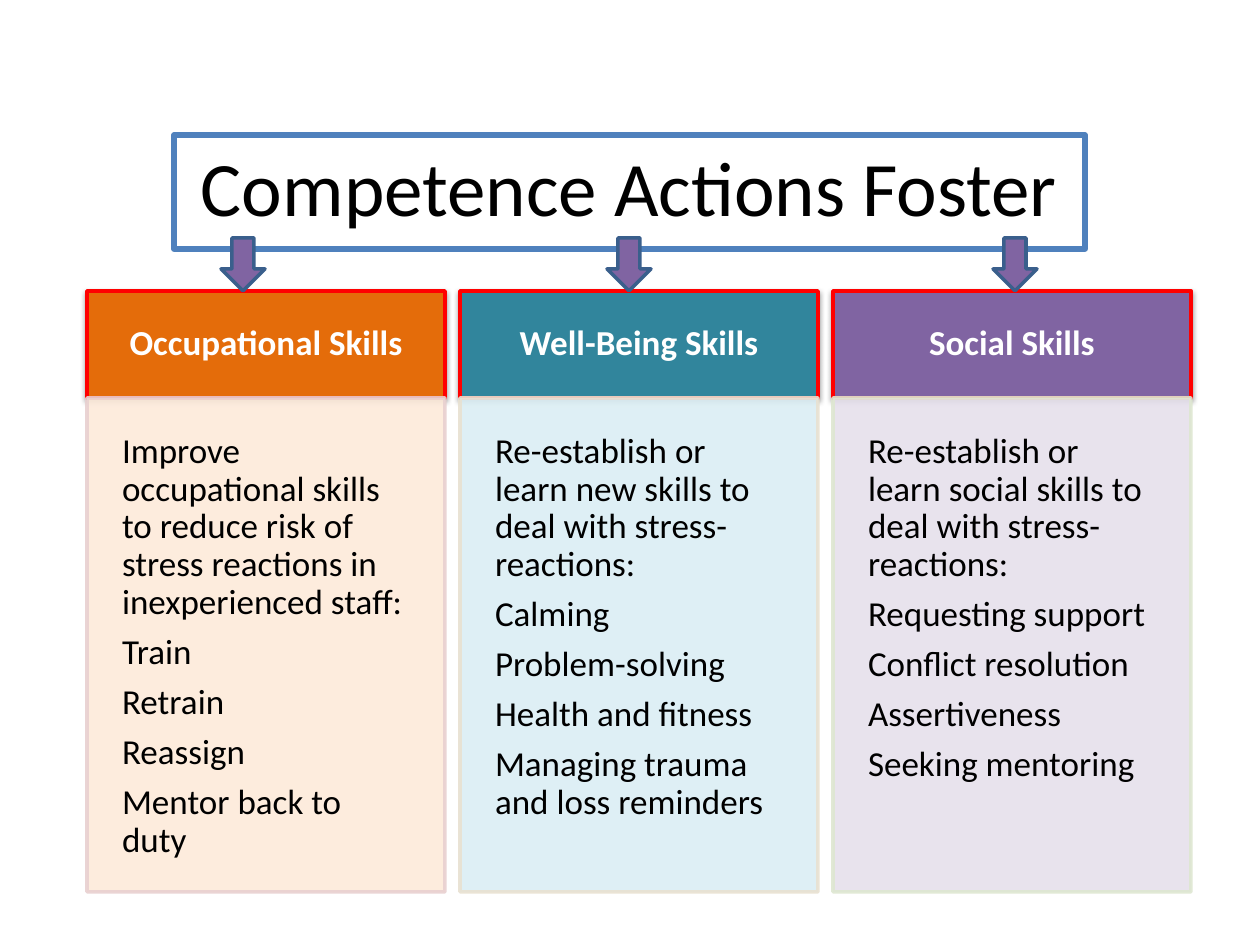
from lxml.etree import SubElement as Sub
from pptx import Presentation
from pptx.dml.color import RGBColor as Rgb
from pptx.enum.shapes import MSO_SHAPE as Kind
from pptx.enum.text import MSO_ANCHOR as Anchor, PP_ALIGN as Align
from pptx.oxml.ns import qn
from pptx.util import Pt

PX = 914400 / 126
INK = {
    "black": "000000", "white": "FFFFFF", "red": "FF0000",
    "blue": "4F81BD", "navy": "3A5F8C",
    "orange": "E46C0A", "teal": "31859C", "purple": "8064A2",
    "peach": "FDEADA", "sky": "DBEEF4", "lilac": "E6E0EC",
    "rose": "E8D0D0", "sand": "E8E1D1", "sage": "DEE7D1",
}
HEAD = {"size": Pt(20), "bold": True, "color": "white"}
BODY = {"size": Pt(20), "color": "black"}
TITLE = {"size": Pt(44), "color": "black"}
CARDS = [
    ("Occupational Skills", "orange", "peach", "rose", [
        "Improve occupational skills to reduce risk of stress reactions in inexperienced staff:",
        "Train", "Retrain", "Reassign", "Mentor back to duty"]),
    ("Well-Being Skills", "teal", "sky", "sand", [
        "Re-establish or learn new skills to deal with stress-reactions:",
        "Calming", "Problem-solving", "Health and fitness",
        "Managing trauma and loss reminders"]),
    ("Social Skills", "purple", "lilac", "sage", [
        "Re-establish or learn social skills to deal with stress-reactions:",
        "Requesting support", "Conflict resolution", "Assertiveness",
        "Seeking mentoring"]),
]


def px(num):
    return round(num * PX)


def rgb(name):
    return Rgb.from_string(INK[name])


def draw(slide, kind, box, fill, line, width=2):
    shape = slide.shapes.add_shape(kind, *map(px, box))
    shape.shadow.inherit = False
    if fill:
        shape.fill.solid()
        shape.fill.fore_color.rgb = rgb(fill)
    else:
        shape.fill.background()
    shape.line.color.rgb = rgb(line)
    shape.line.width = Pt(width)
    return shape


def fade(shape, share):
    for tag in shape.element.spPr.iter(qn("a:srgbClr")):
        Sub(tag, qn("a:alpha"), val=str(share * 1000))


def shade(shape):
    glow = shape.element.spPr.find(qn("a:effectLst"))
    drop = Sub(glow, qn("a:outerShdw"), blurRad=str(Pt(3.1)),
               dist=str(Pt(1.6)), dir="5400000", rotWithShape="0")
    tone = Sub(drop, qn("a:srgbClr"), val=INK["black"])
    Sub(tone, qn("a:alpha"), val="38000")


def write(shape, lines, form, pad, align, anchor, para_form):
    frame = shape.text_frame
    side, edge = map(px, pad)
    look = {"word_wrap": True, "vertical_anchor": anchor,
            "margin_left": side, "margin_right": side,
            "margin_top": edge, "margin_bottom": edge}
    for key, val in look.items():
        setattr(frame, key, val)
    for num, text in enumerate(lines):
        para = frame.add_paragraph() if num else frame.paragraphs[0]
        run = para.add_run()
        run.text = text
        for key, val in {"alignment": align, **para_form}.items():
            setattr(para, key, val)
        run.font.name = "Calibri"
        for key, val in form.items():
            if key == "color":
                run.font.color.rgb = rgb(val)
            else:
                setattr(run.font, key, val)


def add_card(slide, left, card):
    name, dark, pale, rim, lines = card
    gaps = {"line_spacing": 0.9, "space_after": Pt(7)}
    head = draw(slide, Kind.RECTANGLE, (left, 291, 358, 107), dark, "red")
    shade(head)
    write(head, [name], HEAD, (28, 28), Align.CENTER, Anchor.MIDDLE,
          {"line_spacing": 0.9})
    body = draw(slide, Kind.RECTANGLE, (left, 398, 358, 494), pale, rim)
    fade(body, 90)
    write(body, lines, BODY, (35, 35), Align.LEFT, Anchor.TOP, gaps)


def main():
    deck = Presentation()
    deck.slide_width, deck.slide_height = px(1260), px(945)
    slide = deck.slides.add_slide(deck.slide_layouts[6])
    title = draw(slide, Kind.RECTANGLE, (174, 135, 911, 114), None, "blue", 3)
    write(title, ["Competence Actions Foster"], TITLE, (9, 5),
          Align.CENTER, Anchor.TOP, {})
    for num, card in enumerate(CARDS):
        add_card(slide, 87 + 373 * num, card)
    for num in range(len(CARDS)):
        draw(slide, Kind.DOWN_ARROW, (221 + 386 * num, 238, 44, 53),
             "purple", "navy")
    deck.save("out.pptx")


if __name__ == "__main__":
    main()
